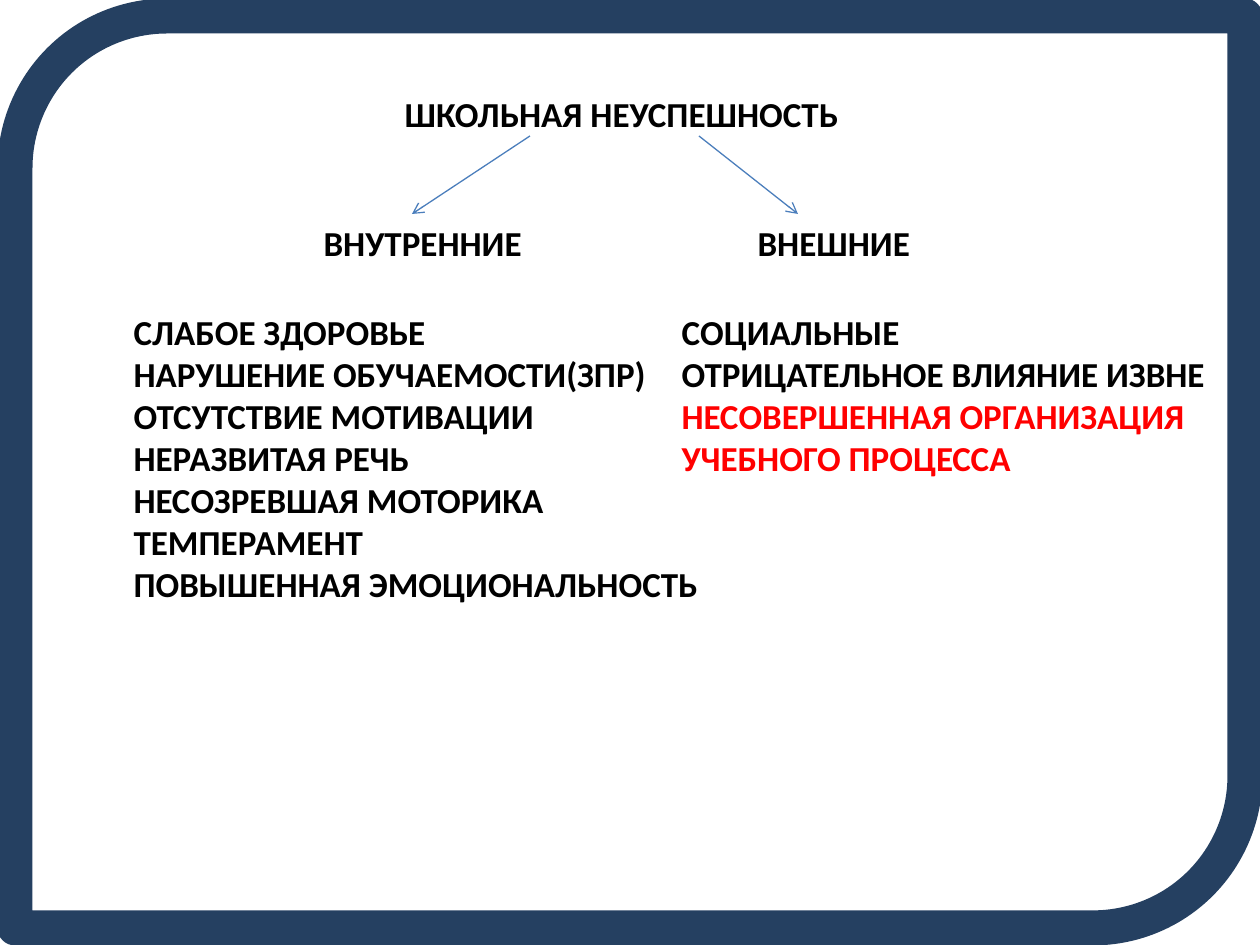
from lxml import etree
from pptx import Presentation
from pptx.dml.color import RGBColor
from pptx.enum.shapes import MSO_CONNECTOR, MSO_SHAPE
from pptx.enum.text import MSO_ANCHOR, MSO_AUTO_SIZE, PP_ALIGN
from pptx.oxml.ns import qn
from pptx.util import Pt

PX = 914400 // 126
LEFT, TOP = PP_ALIGN.LEFT, MSO_ANCHOR.TOP
GROW = MSO_AUTO_SIZE.SHAPE_TO_FIT_TEXT
NAVY = RGBColor(0x25, 0x40, 0x61)
BLUE = RGBColor(0x4B, 0x7E, 0xBC)
BLACK = RGBColor(0, 0, 0)
RED = RGBColor(0xFF, 0, 0)

# Content: placeholder index, left, top, width, lines
TEXTS = [
    (0, 392, 86, 464, ["ШКОЛЬНАЯ НЕУСПЕШНОСТЬ"]),
    (1, 311, 215, 225, ["ВНУТРЕННИЕ"]),
    (3, 745, 215, 179, ["ВНЕШНИЕ"]),
    (2, 121, 304, 595, [
        "СЛАБОЕ ЗДОРОВЬЕ",
        "НАРУШЕНИЕ ОБУЧАЕМОСТИ(ЗПР)",
        "ОТСУТСТВИЕ МОТИВАЦИИ",
        "НЕРАЗВИТАЯ РЕЧЬ",
        "НЕСОЗРЕВШАЯ МОТОРИКА",
        "ТЕМПЕРАМЕНТ",
        "ПОВЫШЕННАЯ ЭМОЦИОНАЛЬНОСТЬ",
    ]),
    (4, 669, 304, 553, [
        "СОЦИАЛЬНЫЕ",
        "ОТРИЦАТЕЛЬНОЕ ВЛИЯНИЕ ИЗВНЕ",
        "НЕСОВЕРШЕННАЯ ОРГАНИЗАЦИЯ",
        "УЧЕБНОГО ПРОЦЕССА",
    ]),
]
ALERTS = {"НЕСОВЕРШЕННАЯ ОРГАНИЗАЦИЯ", "УЧЕБНОГО ПРОЦЕССА"}
ARROWS = [(530, 136, 412, 214), (699, 136, 798, 214)]
LINE, PAD = 42, 13  # line height and total vertical inset


def scale(*sizes):
    return [size * PX for size in sizes]


def fill_text(shape, left, top, width, lines):
    height = len(lines) * LINE + PAD
    shape.left, shape.top, shape.width, shape.height = scale(
        left, top, width, height)
    frame = shape.text_frame
    frame.text = "\n".join(lines)
    frame.word_wrap = False
    frame.auto_size = GROW
    frame.vertical_anchor = TOP
    for para in frame.paragraphs:
        para.alignment = LEFT
        para.space_before = Pt(0)
        props = para._p.get_or_add_pPr()
        props.set("marL", "0")
        props.set("indent", "0")
        etree.SubElement(props, qn("a:buNone"))
        for run in para.runs:
            font = run.font
            font.name, font.size, font.bold = "Calibri", Pt(20), True
            font.color.rgb = RED if run.text in ALERTS else BLACK


def add_arrow(slide, ends):
    arrow = slide.shapes.add_connector(MSO_CONNECTOR.STRAIGHT, *scale(*ends))
    arrow.line.color.rgb = BLUE
    arrow.line.width = Pt(0.75)
    etree.SubElement(arrow.line._get_or_add_ln(), qn("a:tailEnd"), type="arrow")
    etree.SubElement(arrow._element.spPr, qn("a:effectLst"))


def main():
    deck = Presentation()
    deck.slide_width, deck.slide_height = scale(1260, 945)
    slide = deck.slides.add_slide(deck.slide_layouts[4])

    # Border, behind the text
    border = slide.shapes.add_shape(
        MSO_SHAPE.ROUND_2_DIAG_RECTANGLE, *scale(15, 16, 1230, 912))
    border.shadow.inherit = False
    border.fill.background()
    border.line.color.rgb = NAVY
    border.line.width = Pt(20)
    slide.shapes._spTree.insert(2, border._element)

    # Title, headings and lists
    holders = {p.placeholder_format.idx: p for p in slide.placeholders}
    for index, left, top, width, lines in TEXTS:
        fill_text(holders[index], left, top, width, lines)

    # Arrows from the title to the headings
    for ends in ARROWS:
        add_arrow(slide, ends)

    deck.save("out.pptx")


if __name__ == "__main__":
    main()
